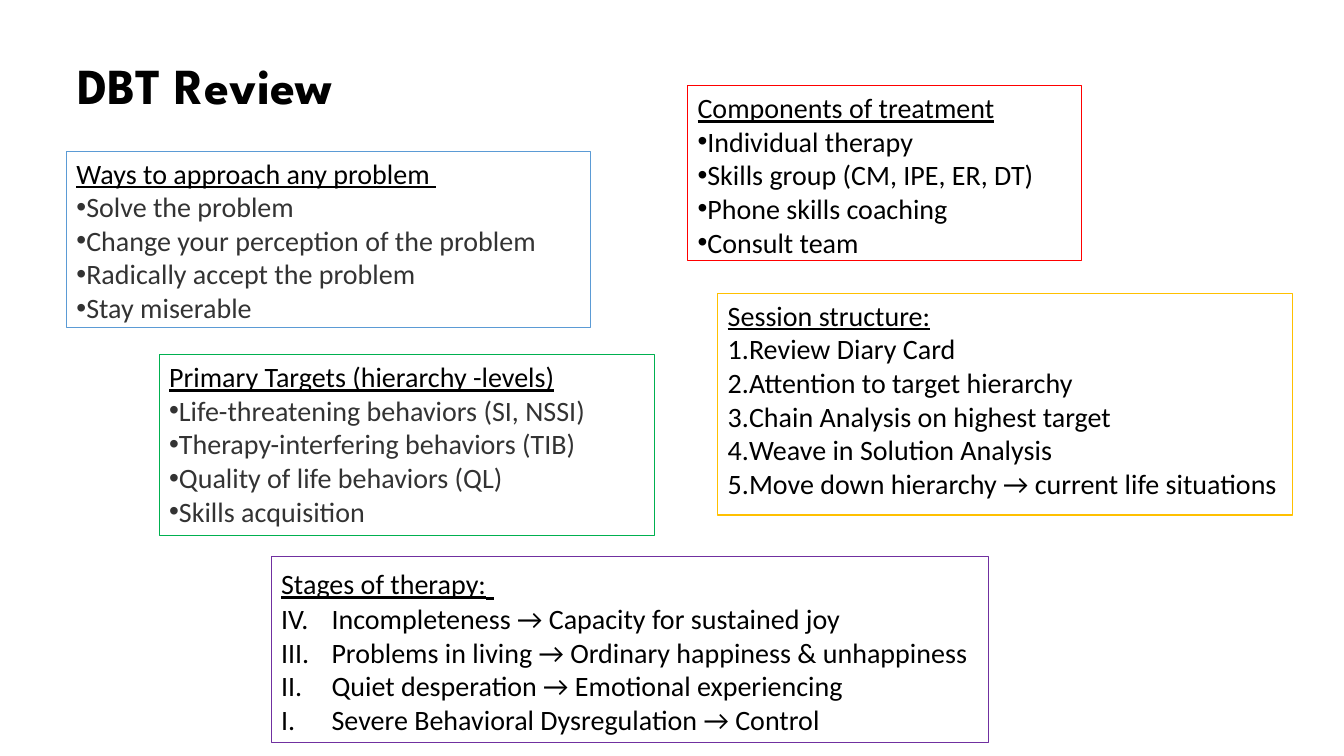
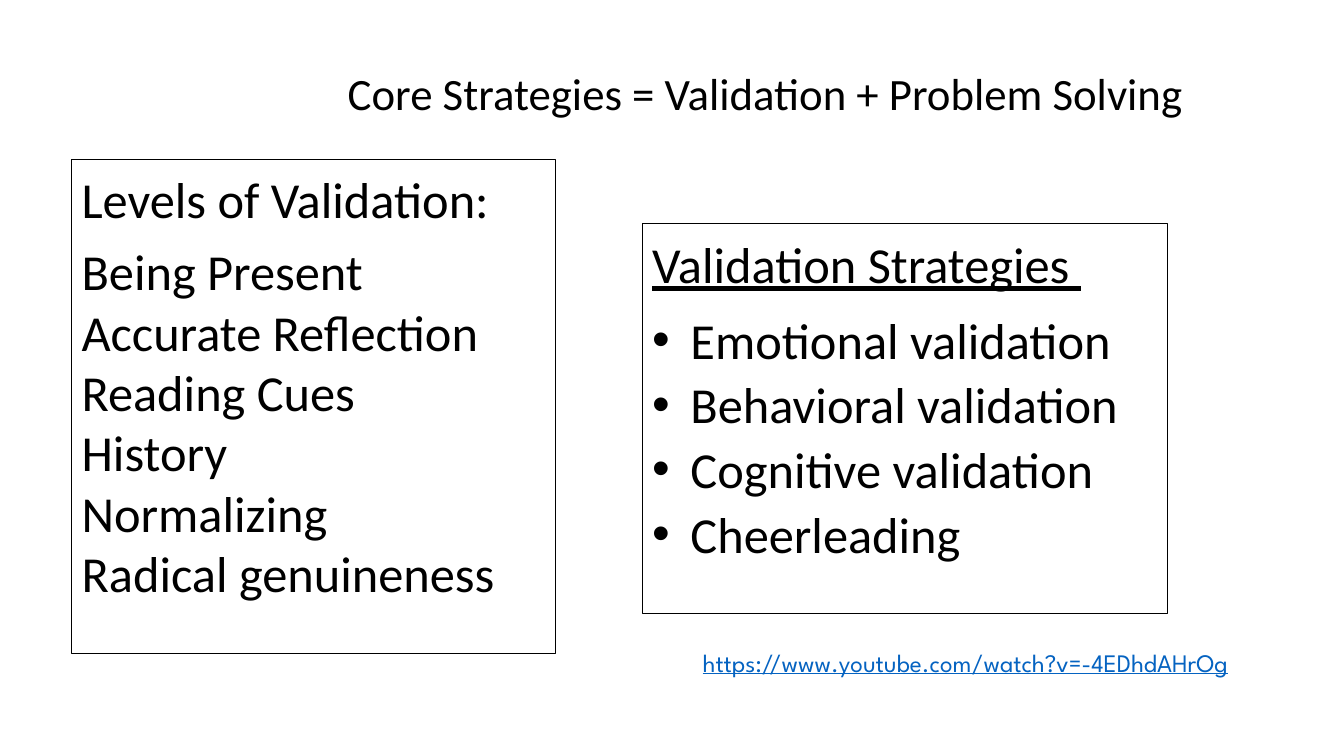
from lxml import etree
from pptx import Presentation
from pptx.dml.color import RGBColor
from pptx.enum.shapes import MSO_SHAPE
from pptx.enum.text import MSO_ANCHOR, PP_ALIGN
from pptx.oxml.ns import qn
from pptx.util import Inches, Pt

RECTANGLE = MSO_SHAPE.RECTANGLE
TOP, MIDDLE = MSO_ANCHOR.TOP, MSO_ANCHOR.MIDDLE
LEFT = PP_ALIGN.LEFT

SLIDE_WIDTH, SLIDE_HEIGHT = Inches(13.33), Inches(7.5)
BODY_FONT, DISPLAY_FONT = "Calibri", "League Spartan"
BLACK, GREY, WHITE, LINK_BLUE = "000000", "333333", "FFFFFF", "0563C1"
BLUE, GREEN, RED, GOLD, PURPLE = "5B9BD5", "00B050", "FF0000", "FFC000", "7030A0"
BULLET = ("a:buChar", {"char": "•"})
NUMBER = ("a:buAutoNum", {"type": "arabicPeriod"})
CARD_SIZE, LARGE_SIZE, SPACER_SIZE = 20, 36, 24
LARGE_SPACING = 1.07


def color(hex_value):
    return RGBColor.from_string(hex_value)


def place(box):
    """Turn (left, top, width, height) in percent of the slide into lengths."""
    sides = (SLIDE_WIDTH, SLIDE_HEIGHT) * 2
    return [int(side * share / 100) for side, share in zip(sides, box)]


def add_panel(slide, box, outline=None):
    shape = slide.shapes.add_shape(RECTANGLE, *place(box))
    shape.shadow.inherit = False
    shape.fill.solid()
    shape.fill.fore_color.rgb = color(WHITE)
    if outline:
        shape.line.color.rgb = color(outline)
        shape.line.width = Pt(0.75)
    else:
        shape.line.fill.background()
    shape.text_frame.word_wrap = True
    shape.text_frame.vertical_anchor = TOP
    return shape.text_frame


def add_text_area(slide, box, anchor=TOP):
    frame = slide.shapes.add_textbox(*place(box)).text_frame
    frame.word_wrap = True
    frame.vertical_anchor = anchor
    return frame


def add_paragraph(frame, marker=None, indent=0, tab=None, spacing=None, after=0):
    first = frame.paragraphs[0]
    paragraph = frame.add_paragraph() if first.runs else first
    properties = paragraph._p.get_or_add_pPr()
    properties.set("marL", str(Inches(indent)))
    properties.set("indent", str(-Inches(indent)))
    if marker:
        tag, attributes = marker
        etree.SubElement(properties, qn("a:buFont"), typeface="Arial")
        etree.SubElement(properties, qn(tag), attributes)
    if tab:
        tabs = etree.SubElement(properties, qn("a:tabLst"))
        etree.SubElement(tabs, qn("a:tab"), pos=str(Inches(tab)), algn="l")
    paragraph.alignment = LEFT
    paragraph.space_after = Pt(after)
    if spacing:
        paragraph.line_spacing = spacing
    return paragraph


def add_run(paragraph, text, size, ink=BLACK, font=BODY_FONT,
            underline=False, bold=False):
    run = paragraph.add_run()
    run.text = text
    run.font.size = Pt(size)
    run.font.name = font
    run.font.color.rgb = color(ink)
    run.font.underline = underline
    run.font.bold = bold


def add_card(slide, box, outline, heading, items, marker=None, ink=BLACK,
             tab=None, heading_tail=None):
    """Outlined box: underlined heading, then one line for each item."""
    frame = add_panel(slide, box, outline)
    title = add_paragraph(frame)
    add_run(title, heading, CARD_SIZE, underline=True)
    if heading_tail:
        add_run(title, heading_tail, SPACER_SIZE, underline=True)
    for item in items:
        add_run(add_paragraph(frame, marker, tab=tab), item, CARD_SIZE, ink)


def add_large_list(slide, box, heading, items, underline=False, marker=None,
                   indent=0, spacing=None):
    frame = add_panel(slide, box, BLACK)
    title = add_paragraph(frame, spacing=LARGE_SPACING, after=8)
    add_run(title, heading, LARGE_SIZE, underline=underline)
    for item in items:
        paragraph = add_paragraph(frame, marker, indent, spacing=spacing)
        add_run(paragraph, item, LARGE_SIZE)


def build_review(slide):
    title = add_paragraph(add_text_area(slide, (5.03, 3.33, 90, 16.67), MIDDLE),
                          spacing=0.9)
    add_run(title, "DBT Review", 36, font=DISPLAY_FONT, bold=True)
    add_card(slide, (4.95, 20, 39, 23.33), BLUE,
             "Ways to approach any problem ",
             ["Solve the problem", "Change your perception of the problem",
              "Radically accept the problem", "Stay miserable"],
             BULLET, GREY)
    add_card(slide, (11.85, 46.93, 36.83, 23.87), GREEN,
             "Primary Targets (hierarchy -levels)",
             ["Life-threatening behaviors (SI, NSSI)",
              "Therapy-interfering behaviors (TIB)",
              "Quality of life behaviors (QL)", "Skills acquisition"],
             BULLET, GREY)
    add_card(slide, (51.16, 11.33, 29.33, 23.07), RED,
             "Components of treatment",
             ["Individual therapy", "Skills group (CM, IPE, ER, DT)",
              "Phone skills coaching", "Consult team"], BULLET)
    add_card(slide, (53.41, 38.8, 42.76, 29.33), GOLD,
             "Session structure:",
             ["Review Diary Card", "Attention to target hierarchy",
              "Chain Analysis on highest target", "Weave in Solution Analysis",
              "Move down hierarchy → current life situations"], NUMBER)
    add_card(slide, (20.18, 73.6, 53.34, 24.67), PURPLE,
             "Stages of therapy:",
             ["IV.\tIncompleteness → Capacity for sustained joy",
              "III.\tProblems in living → Ordinary happiness & unhappiness",
              "II.\tQuiet desperation → Emotional experiencing",
              "I.\tSevere Behavioral Dysregulation → Control"],
             tab=0.47, heading_tail=" ")


def build_strategies(slide):
    add_large_list(slide, (5.33, 21.07, 36, 65.33), "Levels of Validation:",
                   ["Being Present", "Accurate Reflection", "Reading Cues",
                    "History", "Normalizing", "Radical genuineness"])
    title = add_paragraph(add_panel(slide, (25.13, 8, 66.32, 8.53)))
    add_run(title, "Core Strategies = Validation + Problem Solving", 32)
    add_large_list(slide, (47.79, 29.6, 39.08, 51.6), "Validation Strategies ",
                   ["Emotional validation", "Behavioral validation",
                    "Cognitive validation", "Cheerleading"],
                   underline=True, marker=BULLET, indent=0.38,
                   spacing=LARGE_SPACING)
    address = add_paragraph(add_text_area(slide, (51.54, 84.93, 45, 9.47)))
    add_run(address, "https://www.youtube.com/watch?v=-4EDhdAHrOg", 18,
            LINK_BLUE, DISPLAY_FONT, underline=True)


def main():
    presentation = Presentation()
    presentation.slide_width = SLIDE_WIDTH
    presentation.slide_height = SLIDE_HEIGHT
    blank_layout = presentation.slide_layouts[6]
    for build in (build_review, build_strategies):
        build(presentation.slides.add_slide(blank_layout))
    presentation.save("out.pptx")


if __name__ == "__main__":
    main()
